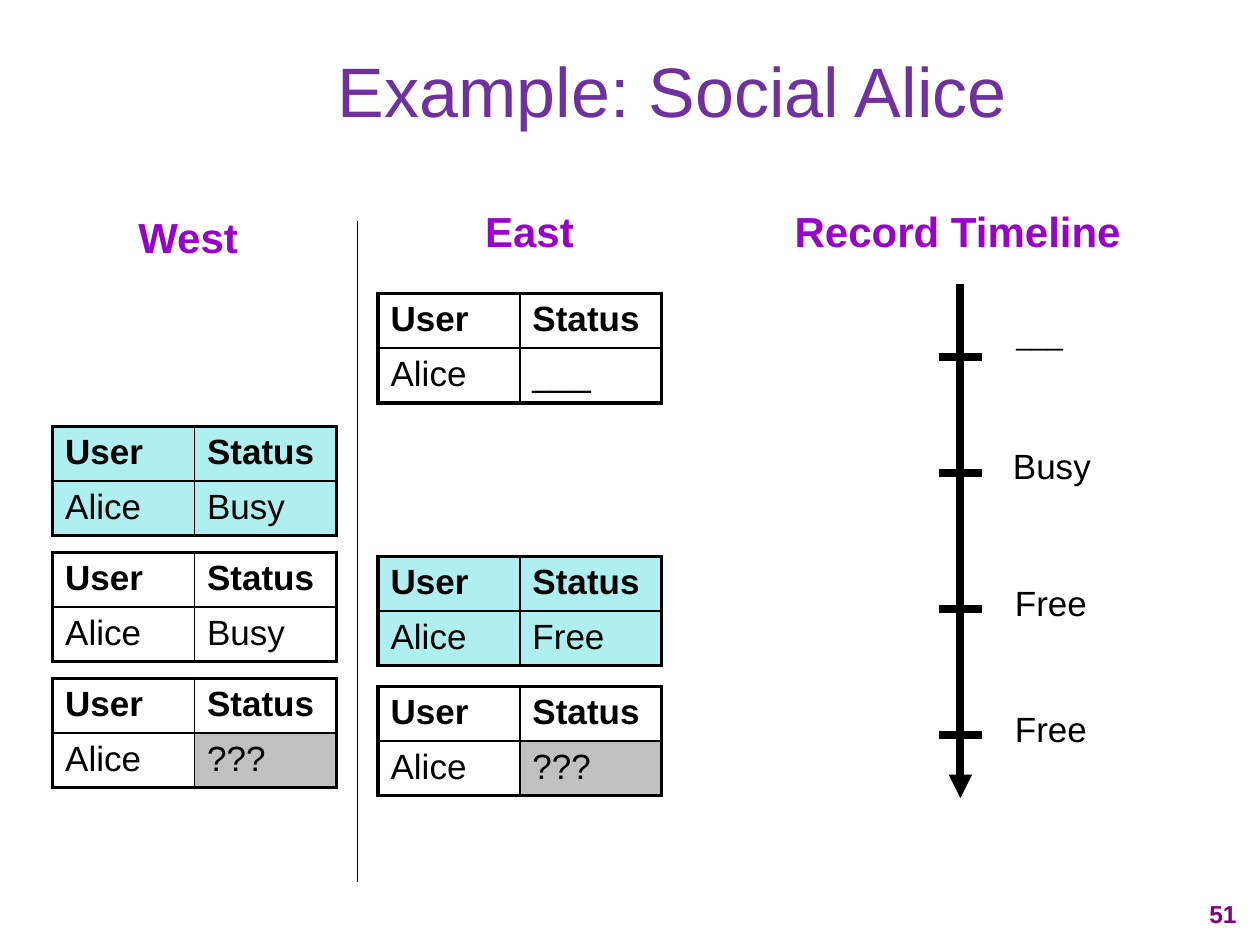
"""Build the "Example: Social Alice" slide with replica tables and a record timeline."""
from dataclasses import dataclass

from lxml import etree
from pptx import Presentation
from pptx.dml.color import RGBColor
from pptx.enum.shapes import MSO_CONNECTOR
from pptx.enum.text import MSO_ANCHOR, MSO_AUTO_SIZE, PP_ALIGN
from pptx.oxml.ns import qn
from pptx.util import Cm, Pt

STRAIGHT = MSO_CONNECTOR.STRAIGHT
LEFT, CENTER, RIGHT = PP_ALIGN.LEFT, PP_ALIGN.CENTER, PP_ALIGN.RIGHT
TOP, MIDDLE = MSO_ANCHOR.TOP, MSO_ANCHOR.MIDDLE
FIT_SHAPE = MSO_AUTO_SIZE.SHAPE_TO_FIT_TEXT


@dataclass(frozen=True)
class Theme:
    font: str = "Arial"
    ink: str = "000000"
    title: str = "7030A0"
    heading: str = "9900CC"
    page: str = "800080"
    plain: str = "FFFFFF"
    updated: str = "AFEFEF"
    unknown: str = "C0C0C0"
    title_size: int = 40
    heading_size: int = 24
    body_size: int = 20
    blank_size: int = 16
    page_size: int = 14
    frame: float = 2.25
    grid: float = 1
    divider: float = 0.75
    timeline: float = 4.5


theme = Theme()


def write(frame, text, size, color, bold=False, align=LEFT):
    paragraph = frame.paragraphs[0]
    paragraph.alignment = align
    run = paragraph.add_run()
    run.text = text
    run.font.name = theme.font
    run.font.size = Pt(size)
    run.font.bold = bold
    run.font.color.rgb = RGBColor.from_string(color)


def draw_line(x1, y1, x2, y2, width):
    line = slide.shapes.add_connector(STRAIGHT, Cm(x1), Cm(y1), Cm(x2), Cm(y2))
    line.line.color.rgb = RGBColor.from_string(theme.ink)
    line.line.width = Pt(width)
    etree.SubElement(line._element.spPr, qn("a:effectLst"))
    return line


prs = Presentation()
prs.slide_width, prs.slide_height = Cm(25.4), Cm(19.05)
slide = prs.slides.add_slide(prs.slide_layouts[6])

west, east = 1.06, 7.62
column_width, row_height = 2.86, 1.1
replicas = [
    (west, 8.6, "Busy", theme.updated, theme.updated),
    (west, 11.14, "Busy", theme.plain, theme.plain),
    (west, 13.68, "???", theme.plain, theme.unknown),
    (east, 5.92, "___", theme.plain, theme.plain),
    (east, 11.22, "Free", theme.updated, theme.updated),
    (east, 13.84, "???", theme.plain, theme.unknown),
]
for left, top, status, base_fill, status_fill in replicas:
    table = slide.shapes.add_table(
        2, 2, Cm(left), Cm(top), Cm(2 * column_width), Cm(2 * row_height)
    ).table
    table.first_row = table.horz_banding = False
    for row, words in enumerate([("User", "Status"), ("Alice", status)]):
        table.rows[row].height = Cm(row_height)
        for column, word in enumerate(words):
            table.columns[column].width = Cm(column_width)
            cell = table.cell(row, column)
            write(cell.text_frame, word, theme.body_size, theme.ink, bold=row == 0)
            borders = {"L": column == 0, "R": column == 1, "T": row == 0, "B": row == 1}
            for side, outer in borders.items():
                width = Pt(theme.frame if outer else theme.grid)
                border = etree.SubElement(
                    cell._tc.get_or_add_tcPr(), qn(f"a:ln{side}"), w=str(width)
                )
                paint = etree.SubElement(border, qn("a:solidFill"))
                etree.SubElement(paint, qn("a:srgbClr"), val=theme.ink)
            cell.fill.solid()
            fill = status_fill if row and column else base_fill
            cell.fill.fore_color.rgb = RGBColor.from_string(fill)

draw_line(7.2, 4.45, 7.2, 17.78, theme.divider)

axis, tick_half = 19.36, 0.43
arrow = draw_line(axis, 5.72, axis, 16.09, theme.timeline)
etree.SubElement(arrow.line._get_or_add_ln(), qn("a:tailEnd"), type="triangle")
for tick in (7.2, 9.53, 12.28, 14.82):
    draw_line(axis - tick_half, tick, axis + tick_half, tick, theme.timeline)

labels = [
    ("West", 2.54, 4.14, 2.6, 1.27, theme.heading_size, theme.heading, True),
    ("East", 9.53, 4.02, 2.4, 1.27, theme.heading_size, theme.heading, True),
    ("Record Timeline", 15.77, 4.02, 7.2, 1.27, theme.heading_size, theme.heading, True),
    ("___", 20.24, 6.27, 1.5, 0.94, theme.blank_size, theme.ink, False),
    ("Busy", 20.17, 8.84, 2.15, 1.1, theme.body_size, theme.ink, False),
    ("Free", 20.21, 11.6, 2.05, 1.1, theme.body_size, theme.ink, False),
    ("Free", 20.21, 14.14, 2.05, 1.1, theme.body_size, theme.ink, False),
]
for text, left, top, width, height, size, color, bold in labels:
    label = slide.shapes.add_textbox(Cm(left), Cm(top), Cm(width), Cm(height)).text_frame
    label.word_wrap = False
    label.auto_size = FIT_SHAPE
    write(label, text, size, color, bold)

title = slide.shapes.add_textbox(Cm(2.12), Cm(0.22), Cm(22.86), Cm(3.18)).text_frame
title.word_wrap = True
title.vertical_anchor = MIDDLE
write(title, "Example: Social Alice", theme.title_size, theme.title, align=CENTER)

page = slide.shapes.add_textbox(Cm(23.71), Cm(17.99), Cm(1.47), Cm(0.84)).text_frame
page.word_wrap = True
page.vertical_anchor = TOP
write(page, "51", theme.page_size, theme.page, bold=True, align=RIGHT)

prs.save("out.pptx")
